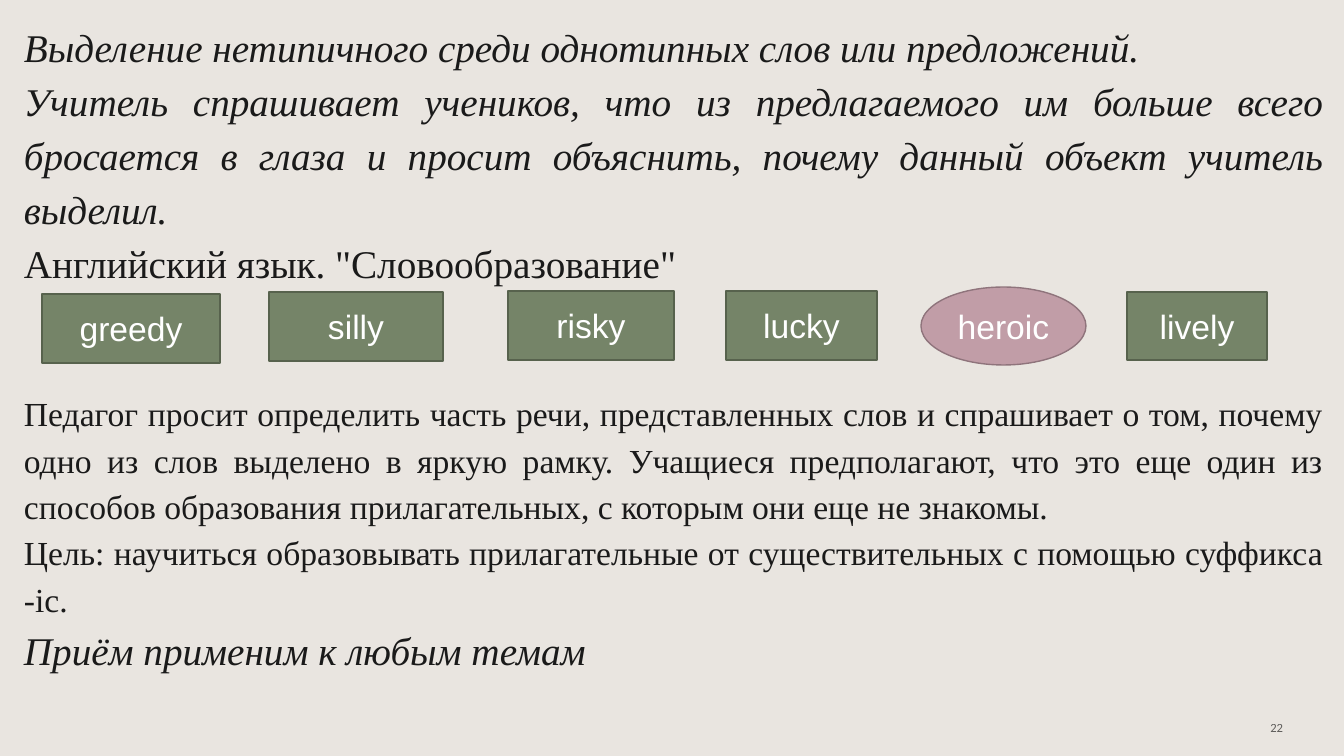
import pptx
import pptx.util
import pptx.dml.color
import pptx.enum.shapes
import pptx.enum.text
import pptx.oxml.ns
import lxml.etree

PX = 914400 / 100.8
SHAPES = pptx.enum.shapes.MSO_SHAPE
ALIGN = pptx.enum.text.PP_ALIGN
ANCHOR = pptx.enum.text.MSO_ANCHOR


def box(*lengths):
    return [round(length * PX) for length in lengths]


def paint(color, value, opacity=100):
    color.rgb = pptx.dml.color.RGBColor.from_string(value)
    if opacity < 100:
        # The newest srgbClr under the colour's fill carries the alpha
        element = color._xFill.find(pptx.oxml.ns.qn("a:srgbClr"))
        alpha = lxml.etree.SubElement(element, pptx.oxml.ns.qn("a:alpha"))
        alpha.set("val", str(opacity * 1000))


presentation = pptx.Presentation()
presentation.slide_width, presentation.slide_height = box(1344, 756)
slide = presentation.slides.add_slide(presentation.slide_layouts[6])

# Tinted backdrop
backdrop = slide.shapes.add_shape(SHAPES.RECTANGLE, *box(0, 0, 1344, 756))
backdrop.shadow.inherit = False
backdrop.fill.solid()
paint(backdrop.fill.fore_color, "E0DAD4")
backdrop_color = backdrop.fill._xPr.find(".//" + pptx.oxml.ns.qn("a:srgbClr"))
lxml.etree.SubElement(backdrop_color, pptx.oxml.ns.qn("a:alpha")).set("val", "70000")
backdrop.line.fill.background()

# Page number
number_box = slide.shapes.add_textbox(*box(991, 708, 302, 40))
number_box.text_frame.word_wrap = True
number_box.text_frame.vertical_anchor = ANCHOR.MIDDLE
number_box.text_frame.text = "22"
paragraph = number_box.text_frame.paragraphs[0]
paragraph.alignment = ALIGN.RIGHT
font = paragraph.runs[0].font
font.name = "Calibri"
font.size = pptx.util.Pt(9)
paint(font.color, "000000", 60)

# Main text: wording, size, italic, space before
paragraphs = [
    ("Выделение нетипичного среди однотипных слов или предложений.", 28, True, 0),
    ("Учитель спрашивает учеников, что из предлагаемого им больше всего "
     "бросается в глаза и просит объяснить, почему данный объект учитель "
     "выделил.", 28, True, 0),
    ('Английский язык. "Словообразование"', 28, False, 0),
    ("Педагог просит определить часть речи, представленных слов и спрашивает "
     "о том, почему одно из слов выделено в яркую рамку. Учащиеся предполагают, "
     "что это еще один из способов образования прилагательных, с которым они "
     "еще не знакомы.", 24, False, 72),
    ("Цель: научиться образовывать прилагательные от существительных с помощью "
     "суффикса -ic.", 24, False, 0),
    ("Приём применим к любым темам", 28, True, 0),
]
main_box = slide.shapes.add_textbox(*box(14, 11, 1319, 673))
main_frame = main_box.text_frame
main_frame.word_wrap = True
main_frame.auto_size = pptx.enum.text.MSO_AUTO_SIZE.SHAPE_TO_FIT_TEXT
main_frame.text = "\n".join(wording for wording, *_ in paragraphs)
for paragraph, (_, size, italic, space) in zip(main_frame.paragraphs, paragraphs):
    paragraph.alignment = ALIGN.JUSTIFY
    paragraph.line_spacing = 1.15
    paragraph.space_before = pptx.util.Pt(space)
    font = paragraph.runs[0].font
    font.name = "Times New Roman"
    font.size = pptx.util.Pt(size)
    font.italic = italic
    paint(font.color, "1A1A1A")

# Word cards, the odd one out in an ellipse
GREEN = (SHAPES.RECTANGLE, "758468", "57624D")
PINK = (SHAPES.OVAL, "C19DA7", "8F747C")
cards = [
    ("greedy", 42, 294, 178, 69, GREEN),
    ("silly", 269, 292, 174, 69, GREEN),
    ("risky", 508, 291, 166, 69, GREEN),
    ("lucky", 726, 291, 151, 69, GREEN),
    ("heroic", 921, 287, 165, 78, PINK),
    ("lively", 1127, 292, 140, 68, GREEN),
]
for word, left, top, width, height, (kind, fill, outline) in cards:
    card = slide.shapes.add_shape(kind, *box(left, top, width, height))
    card.shadow.inherit = False
    card.fill.solid()
    paint(card.fill.fore_color, fill)
    paint(card.line.color, outline)
    card.line.width = pptx.util.Pt(1)
    card.text_frame.text = word
    card.text_frame.vertical_anchor = ANCHOR.MIDDLE
    paragraph = card.text_frame.paragraphs[0]
    paragraph.alignment = ALIGN.CENTER
    font = paragraph.runs[0].font
    font.name = "Arial"
    font.size = pptx.util.Pt(24)
    paint(font.color, "FFFFFF")

presentation.save("out.pptx")
